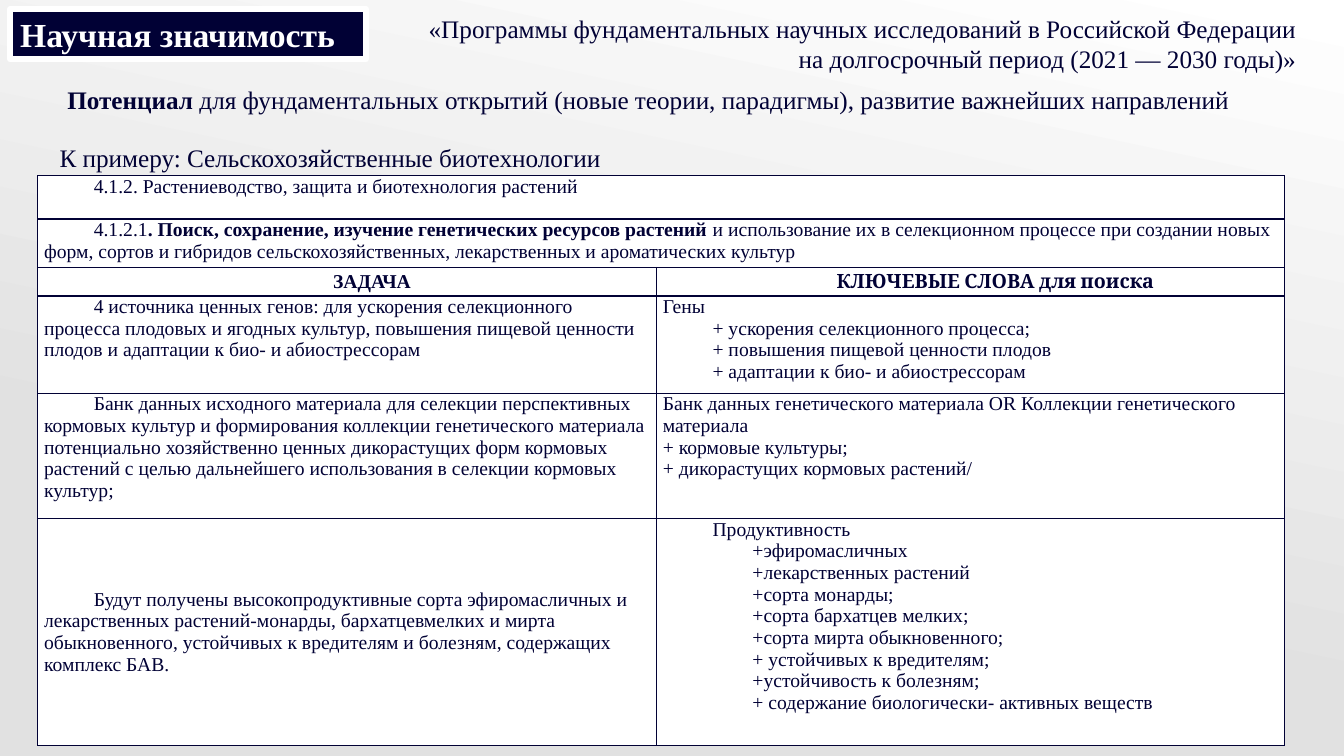
from dataclasses import dataclass

from lxml import etree
from pptx import Presentation
from pptx import util as u
from pptx.dml.color import RGBColor
from pptx.enum import text
from pptx.oxml.ns import qn


@dataclass(frozen=True)
class Theme:
    """Colours, fonts and type sizes of the slide."""
    navy: str = "010135"
    white: str = "FFFFFF"
    grey: str = "E1E1E1"
    font: str = "Times New Roman"
    keyword_font: str = "Cambria"
    title: int = 24
    body: int = 18
    cell: int = 14


THEME = Theme()
LEFT, CENTER, RIGHT = (text.PP_ALIGN.LEFT, text.PP_ALIGN.CENTER, text.PP_ALIGN.RIGHT)
TOP, MIDDLE = text.MSO_ANCHOR.TOP, text.MSO_ANCHOR.MIDDLE
INDENT, DEEP_INDENT = 35.5, 64

SECTIONS = [
    "4.1.2. Растениеводство, защита и биотехнология растений",
    "4.1.2.1*. Поиск, сохранение, изучение генетических ресурсов растений *"
    "и использование их в селекционном процессе при создании новых форм, сортов "
    "и гибридов сельскохозяйственных, лекарственных и ароматических культур",
]
HEADERS = [("*ЗАДАЧА*", THEME.font), ("*КЛЮЧЕВЫЕ СЛОВА для поиска*", THEME.keyword_font)]
TASKS = [
    ("4 источника ценных генов: для ускорения селекционного процесса плодовых и "
     "ягодных культур, повышения пищевой ценности плодов и адаптации к био- и "
     "абиострессорам", TOP,
     ["Гены", "+ ускорения селекционного процесса;",
      "+ повышения пищевой ценности плодов", "+ адаптации к био- и абиострессорам"],
     0, INDENT),
    ("Банк данных исходного материала для селекции перспективных кормовых культур и "
     "формирования коллекции генетического материала потенциально хозяйственно ценных "
     "дикорастущих форм кормовых растений с целью дальнейшего использования в селекции "
     "кормовых культур;", TOP,
     ["Банк данных генетического материала OR Коллекции генетического материала",
      "+ кормовые культуры;", "+ дикорастущих кормовых растений/"],
     0, 0),
    ("Будут получены высокопродуктивные сорта эфиромасличных и лекарственных "
     "растений-монарды, бархатцевмелких и мирта обыкновенного, устойчивых к вредителям "
     "и болезням, содержащих комплекс БАВ.", MIDDLE,
     ["Продуктивность", "+эфиромасличных", "+лекарственных растений", "+сорта монарды;",
      "+сорта бархатцев мелких;", "+сорта мирта обыкновенного;",
      "+ устойчивых к вредителям;", "+устойчивость к болезням;",
      "+ содержание биологически- активных веществ"],
     INDENT, DEEP_INDENT),
]


def paint(fill, colour):
    """Fill solidly with a theme colour."""
    fill.solid()
    fill.fore_color.rgb = RGBColor.from_string(colour)


def write(frame, lines, size, colour=THEME.navy, font=THEME.font, align=LEFT,
          first=0, rest=0, spacing=None):
    """Write lines, with bold between asterisks and first-line indents."""
    for index, line in enumerate(lines):
        para = frame.paragraphs[0] if index == 0 else frame.add_paragraph()
        para.alignment = align
        if spacing:
            para.line_spacing = spacing
        indent = rest if index else first
        if indent:
            properties = para._p.get_or_add_pPr()
            properties.set("marL", "0")
            properties.set("indent", str(u.Pt(indent)))
        for part, words in enumerate(line.split("*")):
            if words:
                span = para.add_run()
                span.text = words
                span.font.name = font
                span.font.size = u.Pt(size)
                span.font.bold = part % 2 == 1
                span.font.color.rgb = RGBColor.from_string(colour)


def add_background(page):
    """Shade the page from white down to grey."""
    fill = page.background.fill
    fill.gradient()
    fill.gradient_angle = 258
    shades = [(0, THEME.white), (0.68, THEME.grey)]
    for stop, (position, colour) in zip(fill.gradient_stops, shades):
        stop.position = position
        stop.color.rgb = RGBColor.from_string(colour)


def add_title(page, box, words):
    """Turn the title placeholder into a framed label."""
    title = page.shapes.title
    title.left, title.top, title.width, title.height = map(u.Pt, box)
    paint(title.fill, THEME.navy)
    paint(title.line.fill, THEME.white)
    title.line.width = u.Pt(4.25)
    title.text_frame.auto_size = text.MSO_AUTO_SIZE.NONE
    title.text_frame.vertical_anchor = TOP
    write(title.text_frame, [f"*{words}*"], THEME.title, THEME.white)


def add_note(page, box, lines, wrap=True, **style):
    """Place a text box of body size."""
    frame = page.shapes.add_textbox(*map(u.Pt, box)).text_frame
    frame.word_wrap = wrap
    write(frame, lines, THEME.body, **style)


def style_cell(cell):
    """Give a cell its fill, margins and thin border."""
    paint(cell.fill, THEME.white)
    cell.margin_left = cell.margin_right = u.Pt(4.5)
    cell.margin_top = cell.margin_bottom = 0
    properties = cell._tc.get_or_add_tcPr()
    for position, side in enumerate(("lnL", "lnR", "lnT", "lnB")):
        border = etree.Element(qn(f"a:{side}"), w=str(u.Pt(1)))
        solid = etree.SubElement(border, qn("a:solidFill"))
        etree.SubElement(solid, qn("a:srgbClr"), val=THEME.navy)
        properties.insert(position, border)


def fill_cell(cell, lines, anchor=TOP, **style):
    """Write the text of one table cell."""
    cell.vertical_anchor = anchor
    write(cell.text_frame, lines, THEME.cell, **style)


def add_task_table(page, box, columns, rows):
    """Build the table of sections, tasks and search keywords."""
    table = page.shapes.add_table(len(rows), len(columns), *map(u.Pt, box)).table
    table.first_row = table.horz_banding = False
    for column, width in zip(table.columns, columns):
        column.width = u.Pt(width)
    for row, height in zip(table.rows, rows):
        row.height = u.Pt(height)
    for cell in table.iter_cells():
        style_cell(cell)
    for index, section in enumerate(SECTIONS):
        table.cell(index, 0).merge(table.cell(index, 1))
        fill_cell(table.cell(index, 0), [section], first=INDENT)
    header_row = len(SECTIONS)
    for index, (header, font) in enumerate(HEADERS):
        fill_cell(table.cell(header_row, index), [header], MIDDLE,
                  font=font, align=CENTER, first=INDENT)
    for index, (task, anchor, keywords, first, rest) in enumerate(TASKS, header_row + 1):
        fill_cell(table.cell(index, 0), [task], anchor, first=INDENT)
        fill_cell(table.cell(index, 1), keywords, first=first, rest=rest)


def main():
    """Build and save the slide."""
    deck = Presentation()
    deck.slide_width, deck.slide_height = u.Pt(960), u.Pt(540)
    page = deck.slides.add_slide(deck.slide_layouts[5])
    add_background(page)
    add_title(page, (7.2, 6.5, 254, 36), "Научная значимость")
    add_note(page, (297.5, 5.75, 635.5, 51),
             ["«Программы фундаментальных научных исследований в Российской Федерации ",
              "на долгосрочный период (2021 — 2030 годы)»"], align=RIGHT)
    add_note(page, (41, 57, 869, 29),
             ["*Потенциал* для фундаментальных открытий (новые теории, парадигмы), "
              "развитие важнейших направлений"])
    add_note(page, (0, 87, 445, 40), ["К примеру: Сельскохозяйственные биотехнологии"],
             wrap=False, first=INDENT, spacing=1.5)
    add_task_table(page, (27, 125.5, 890.5, 407), (442, 448.5),
                   (31, 34.5, 20.5, 69.5, 89.5, 162))
    deck.save("out.pptx")


if __name__ == "__main__":
    main()
